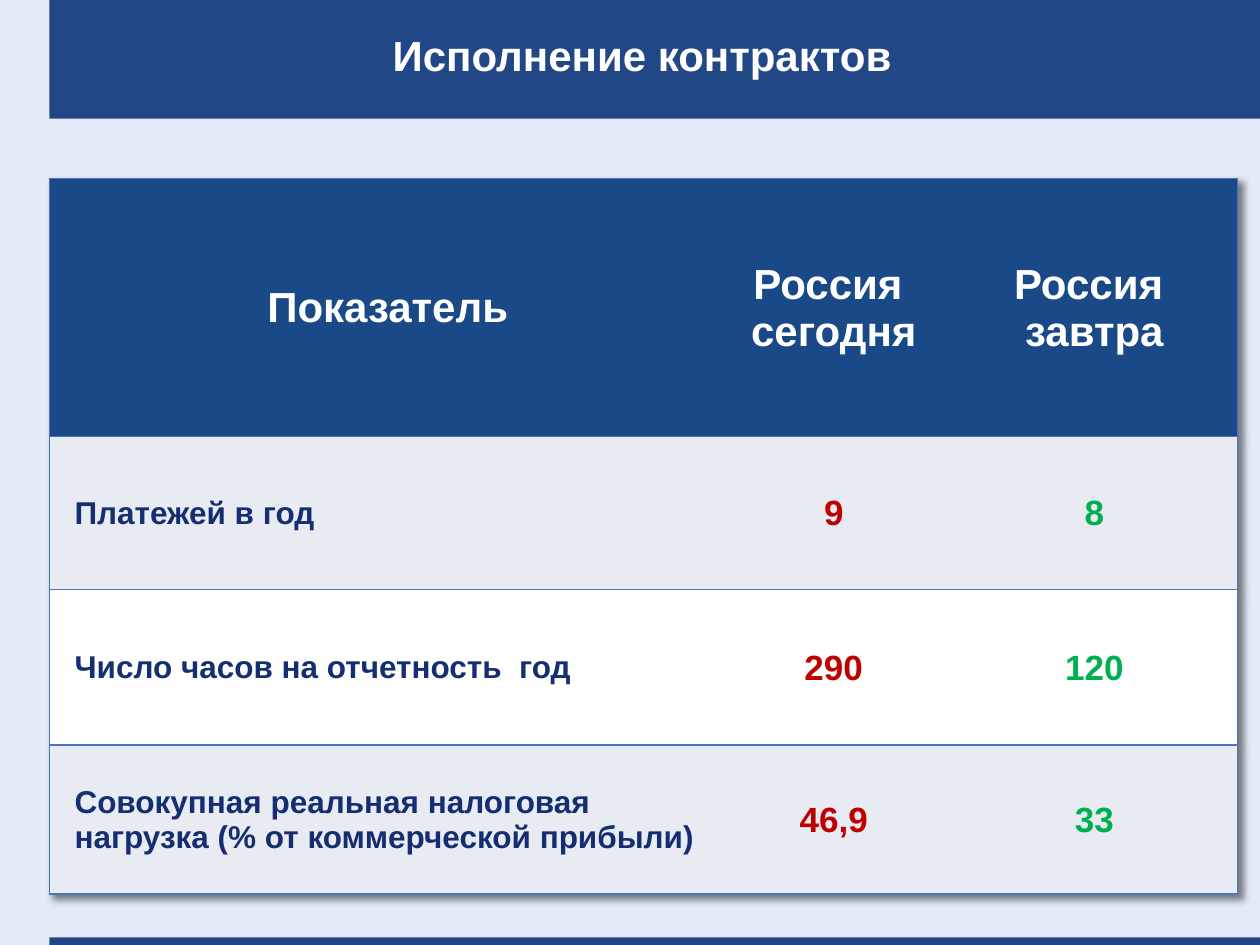
from dataclasses import dataclass

from pptx import Presentation
from pptx.dml.color import RGBColor
from pptx.enum import shapes, text
from pptx.oxml import parse_xml
from pptx.oxml.ns import nsdecls, qn
from pptx.util import Pt


@dataclass(frozen=True)
class Theme:
    font: str = "Arial"
    background: str = "E3EBF8"
    bar: str = "214786"
    header: str = "194986"
    band: str = "E9EBF3"
    white: str = "FFFFFF"
    border: str = "4D74BB"
    label: str = "142E71"
    today: str = "C00000"
    tomorrow: str = "00B050"
    title_size: int = 24
    value_size: int = 20
    label_size: int = 18


@dataclass(frozen=True)
class Box:
    left: float
    top: float
    width: float
    height: float

    def lengths(self):
        return Pt(self.left), Pt(self.top), Pt(self.width), Pt(self.height)


@dataclass(frozen=True)
class Indicator:
    name: str
    today: str
    tomorrow: str


@dataclass(frozen=True)
class CellStyle:
    fill: str
    color: str
    size: int
    centered: bool = True
    inset: float = 0.7


THEME = Theme()
SLIDE_WIDTH, SLIDE_HEIGHT = 720, 540
LEFT = 28.2
BAR_WIDTH = SLIDE_WIDTH - LEFT
TOP_BAR = Box(LEFT, 0, BAR_WIDTH, 67.8)
BOTTOM_BAR = Box(LEFT, 535.7, BAR_WIDTH, SLIDE_HEIGHT - 535.7)
TITLE_BOX = Box(LEFT, 0, 663, 67.8)
COLUMNS = (381, 134.5, 163.5)
ROWS = (147.4, 87.4, 89.1, 85.1)
TABLE_BOX = Box(LEFT, 102, sum(COLUMNS), sum(ROWS))
HEADINGS = ("Показатель", "Россия \nсегодня", "Россия \nзавтра")
INDICATORS = (
    Indicator("Платежей в год", "9", "8"),
    Indicator("Число часов на отчетность  год", "290", "120"),
    Indicator("Совокупная реальная налоговая нагрузка (% от коммерческой прибыли)", "46,9", "33"),
)


def rgb(color: str) -> RGBColor:
    return RGBColor.from_string(color)


def shadow(blur: float, distance: float, alpha: int):
    return parse_xml(
        f'<a:effectLst {nsdecls("a")}><a:outerShdw blurRad="{Pt(blur)}" dist="{Pt(distance)}" '
        f'dir="2700000" algn="tl" rotWithShape="0"><a:srgbClr val="000000">'
        f'<a:alpha val="{alpha * 1000}"/></a:srgbClr></a:outerShdw></a:effectLst>'
    )


def style_font(font, color: str, size: int) -> None:
    font.name = THEME.font
    font.size = Pt(size)
    font.bold = True
    font.color.rgb = rgb(color)


def draw_bar(slide, box: Box) -> None:
    sp = slide.shapes.add_shape(shapes.MSO_SHAPE.RECTANGLE, *box.lengths())
    sp.shadow.inherit = False
    sp.fill.solid()
    sp.fill.fore_color.rgb = rgb(THEME.bar)
    sp.line.fill.background()


def draw_title(slide, wording: str) -> None:
    sp = slide.shapes.title
    sp.left, sp.top, sp.width, sp.height = TITLE_BOX.lengths()
    sp.element.getparent().append(sp.element)
    tf = sp.text_frame
    tf.auto_size = text.MSO_AUTO_SIZE.NONE
    tf.word_wrap = True
    tf.vertical_anchor = text.MSO_ANCHOR.MIDDLE
    tf.margin_left = Pt(14.4)
    tf.margin_top = tf.margin_right = tf.margin_bottom = 0
    p = tf.paragraphs[0]
    p.alignment = text.PP_ALIGN.CENTER
    p.line_spacing = 0.8
    r = p.add_run()
    r.text = wording
    r.font.color.rgb = rgb(THEME.white)
    r._r.get_or_add_rPr().append(shadow(0, 3, 100))
    style_font(r.font, THEME.white, THEME.title_size)


def draw_borders(cell, first: bool, last: bool) -> None:
    for side, visible in (("L", first), ("R", last), ("T", True), ("B", True)):
        fill = f'<a:solidFill><a:srgbClr val="{THEME.border}"/></a:solidFill>' if visible else "<a:noFill/>"
        line = parse_xml(f'<a:ln{side} {nsdecls("a")} w="{Pt(1)}">{fill}</a:ln{side}>')
        cell._tc.get_or_add_tcPr().append(line)


def fill_cell(cell, wording: str, style: CellStyle) -> None:
    cell.fill.solid()
    cell.fill.fore_color.rgb = rgb(style.fill)
    cell.vertical_anchor = text.MSO_ANCHOR.MIDDLE
    cell.margin_left = Pt(style.inset)
    cell.margin_top = cell.margin_right = Pt(0.7)
    cell.margin_bottom = 0
    cell.text_frame.text = wording
    for p in cell.text_frame.paragraphs:
        p.alignment = text.PP_ALIGN.CENTER if style.centered else text.PP_ALIGN.LEFT
        style_font(p.font, style.color, style.size)


def draw_table(slide) -> None:
    frame = slide.shapes.add_table(len(ROWS), len(COLUMNS), *TABLE_BOX.lengths())
    next(frame.element.iter(qn("a:tblPr"))).insert(0, shadow(4, 4, 50))
    table = frame.table
    for column, width in zip(table.columns, COLUMNS):
        column.width = Pt(width)
    for row, height in zip(table.rows, ROWS):
        row.height = Pt(height)

    heading = CellStyle(THEME.header, THEME.white, THEME.title_size)
    first_heading = CellStyle(THEME.header, THEME.white, THEME.title_size, inset=6.5)
    rows = [list(zip(HEADINGS, (first_heading, heading, heading)))]
    for i, item in enumerate(INDICATORS):
        fill = THEME.white if i % 2 else THEME.band
        rows.append([
            (item.name, CellStyle(fill, THEME.label, THEME.label_size, False, 14.4)),
            (item.today, CellStyle(fill, THEME.today, THEME.value_size)),
            (item.tomorrow, CellStyle(fill, THEME.tomorrow, THEME.value_size)),
        ])
    for i, row in enumerate(rows):
        for j, (wording, style) in enumerate(row):
            cell = table.cell(i, j)
            draw_borders(cell, j == 0, j == len(row) - 1)
            fill_cell(cell, wording, style)


def main() -> None:
    prs = Presentation()
    prs.slide_width, prs.slide_height = Pt(SLIDE_WIDTH), Pt(SLIDE_HEIGHT)
    slide = prs.slides.add_slide(prs.slide_layouts[5])
    slide.background.fill.solid()
    slide.background.fill.fore_color.rgb = rgb(THEME.background)
    for box in (TOP_BAR, BOTTOM_BAR):
        draw_bar(slide, box)
    draw_table(slide)
    draw_title(slide, "Исполнение контрактов")
    prs.save("out.pptx")


if __name__ == "__main__":
    main()
